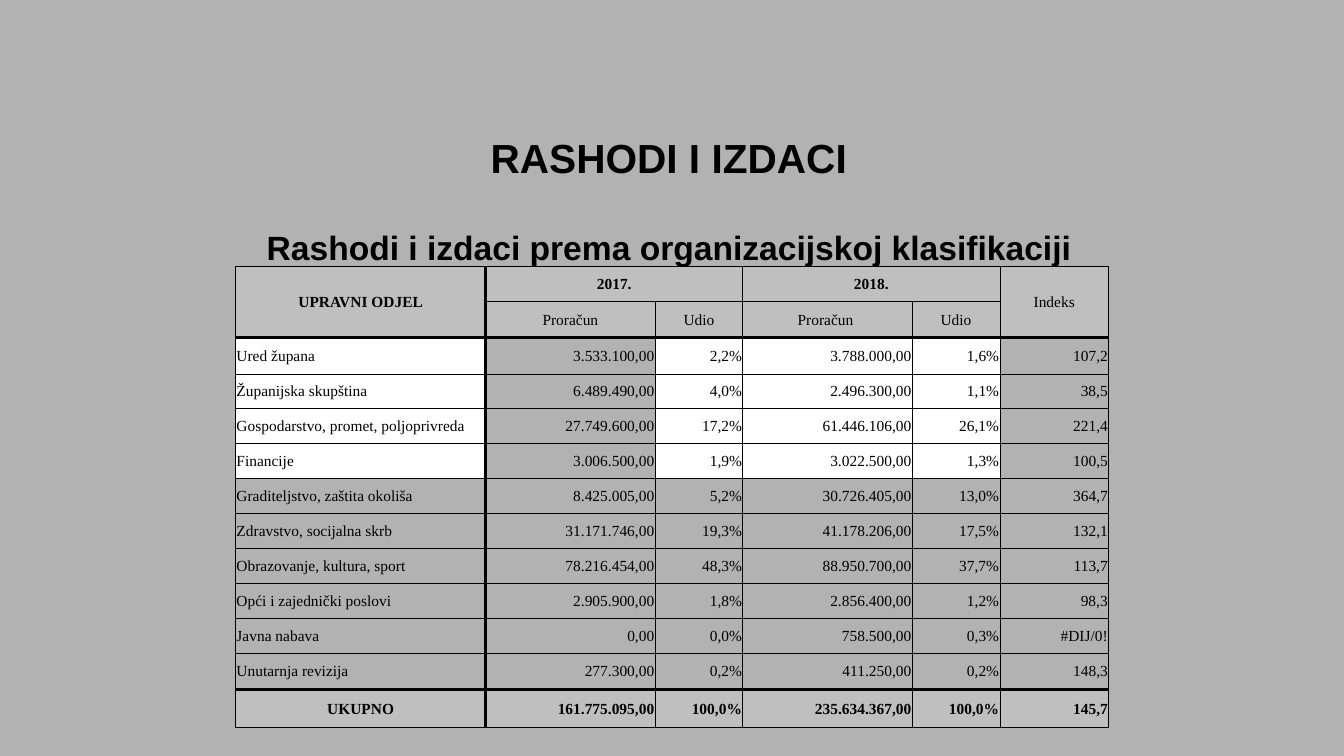
from lxml import etree
from pptx import Presentation, util as u
from pptx.dml.color import RGBColor
from pptx.enum import text
from pptx.oxml import ns

BLACK = RGBColor(0x00, 0x00, 0x00)
WHITE = RGBColor(0xFF, 0xFF, 0xFF)
BACKGROUND_GREY = RGBColor(0xB2, 0xB2, 0xB2)
HEADER_GREY = RGBColor(0xBF, 0xBF, 0xBF)
LEFT, CENTER, RIGHT = text.PP_ALIGN.LEFT, text.PP_ALIGN.CENTER, text.PP_ALIGN.RIGHT
NO_STYLE = "{2D5ABB26-0587-4C30-8999-92F81FD0307C}"

CELL_FORMAT = {
    "margin_left": u.Cm(0.02),
    "margin_right": u.Cm(0.02),
    "margin_top": u.Cm(0.02),
    "margin_bottom": 0,
    "vertical_anchor": text.MSO_ANCHOR.MIDDLE,
}
TITLE_FORMAT = {
    "word_wrap": True,
    "margin_left": 0,
    "margin_right": 0,
    "margin_top": u.Cm(0.23),
    "margin_bottom": 0,
    "vertical_anchor": text.MSO_ANCHOR.TOP,
}

ROWS = [
    ["UPRAVNI ODJEL", "2017.", "", "2018.", "", "Indeks"],
    ["", "Proračun", "Udio", "Proračun ", "Udio", ""],
    ["Ured župana", "3.533.100,00", "2,2%", "3.788.000,00", "1,6%", "107,2"],
    ["Županijska skupština", "6.489.490,00", "4,0%", "2.496.300,00", "1,1%", "38,5"],
    ["Gospodarstvo, promet, poljoprivreda", "27.749.600,00", "17,2%", "61.446.106,00", "26,1%", "221,4"],
    ["Financije", "3.006.500,00", "1,9%", "3.022.500,00", "1,3%", "100,5"],
    ["Graditeljstvo, zaštita okoliša", "8.425.005,00", "5,2%", "30.726.405,00", "13,0%", "364,7"],
    ["Zdravstvo, socijalna skrb", "31.171.746,00", "19,3%", "41.178.206,00", "17,5%", "132,1"],
    ["Obrazovanje, kultura, sport", "78.216.454,00", "48,3%", "88.950.700,00", "37,7%", "113,7"],
    ["Opći i zajednički poslovi", "2.905.900,00", "1,8%", "2.856.400,00", "1,2%", "98,3"],
    ["Javna nabava", "0,00", "0,0%", "758.500,00", "0,3%", "#DIJ/0!"],
    ["Unutarnja revizija", "277.300,00", "0,2%", "411.250,00", "0,2%", "148,3"],
    ["UKUPNO", "161.775.095,00", "100,0%", "235.634.367,00", "100,0%", "145,7"],
]
TOTAL_ROW = len(ROWS) - 1
COLUMN_WIDTHS = [6.3, 4.27, 2.21, 4.27, 2.21, 2.74]
ROW_HEIGHTS = [0.88, 0.91, 0.91] + [0.88] * 8 + [0.91, 0.97]

# Rule weights in points, from the first edge to the last
VERTICAL_RULES = [1, 2, 0.5, 0.5, 0.5, 0.5, 1]
HORIZONTAL_RULES = [1, 0.5, 2] + [0.5] * 9 + [2, 1]


def style_run(run, font_name, size, bold):
    run.font.name = font_name
    run.font.size = u.Pt(size)
    run.font.bold = bold
    run.font.color.rgb = BLACK


def add_border(cell, side, weight):
    properties = cell._tc.get_or_add_tcPr()
    line = etree.SubElement(properties, ns.qn(f"a:ln{side}"), w=str(u.Pt(weight)))
    fill = etree.SubElement(line, ns.qn("a:solidFill"))
    etree.SubElement(fill, ns.qn("a:srgbClr"), val=str(BLACK))


# Slide
presentation = Presentation()
presentation.slide_width = u.Cm(33.87)
presentation.slide_height = u.Cm(19.05)
slide = presentation.slides.add_slide(presentation.slide_layouts[6])
slide.background.fill.solid()
slide.background.fill.fore_color.rgb = BACKGROUND_GREY

# Title and subtitle
title_box = slide.shapes.add_textbox(u.Cm(5.43), u.Cm(3.12), u.Cm(22.86), u.Cm(3.5))
for name, value in TITLE_FORMAT.items():
    setattr(title_box.text_frame, name, value)
title = title_box.text_frame.paragraphs[0]
subtitle = title_box.text_frame.add_paragraph()
subtitle.space_before = u.Pt(32)
for paragraph, wording, size in [
    (title, "RASHODI I IZDACI", 29),
    (subtitle, "Rashodi i izdaci prema organizacijskoj klasifikaciji", 24),
]:
    paragraph.alignment = CENTER
    run = paragraph.add_run()
    run.text = wording
    style_run(run, "Arial", size, True)

# Table grid
table_frame = slide.shapes.add_table(
    len(ROWS), len(COLUMN_WIDTHS), u.Cm(5.94), u.Cm(6.72),
    u.Cm(sum(COLUMN_WIDTHS)), u.Cm(sum(ROW_HEIGHTS)),
)
table = table_frame.table
table.first_row = False
table.horz_banding = False
table._tbl.tblPr.find(ns.qn("a:tableStyleId")).text = NO_STYLE
for column, width in zip(table.columns, COLUMN_WIDTHS):
    column.width = u.Cm(width)
for row, height in zip(table.rows, ROW_HEIGHTS):
    row.height = u.Cm(height)

# Merged header cells
for first, last in [((0, 0), (1, 0)), ((0, 1), (0, 2)), ((0, 3), (0, 4)), ((0, 5), (1, 5))]:
    table.cell(*first).merge(table.cell(*last))

# Table cells
for r, values in enumerate(ROWS):
    for c, value in enumerate(values):
        cell = table.cell(r, c)
        if cell.is_spanned:
            continue
        for name, setting in CELL_FORMAT.items():
            setattr(cell, name, setting)

        bottom = r + (cell.span_height if cell.is_merge_origin else 1)
        right = c + (cell.span_width if cell.is_merge_origin else 1)
        add_border(cell, "L", VERTICAL_RULES[c])
        add_border(cell, "R", VERTICAL_RULES[right])
        add_border(cell, "T", HORIZONTAL_RULES[r])
        add_border(cell, "B", HORIZONTAL_RULES[bottom])

        is_header = r < 2
        if is_header or r == TOTAL_ROW:
            cell.fill.solid()
            cell.fill.fore_color.rgb = HEADER_GREY
        elif r < 6 and c in (0, 2, 3, 4):
            cell.fill.solid()
            cell.fill.fore_color.rgb = WHITE
        else:
            cell.fill.background()

        paragraph = cell.text_frame.paragraphs[0]
        if is_header or (r == TOTAL_ROW and c == 0):
            paragraph.alignment = CENTER
        else:
            paragraph.alignment = LEFT if c == 0 else RIGHT
        run = paragraph.add_run()
        run.text = value
        style_run(run, "Times New Roman", 11, r == TOTAL_ROW or (r == 0 and c < 5))

presentation.save("out.pptx")
